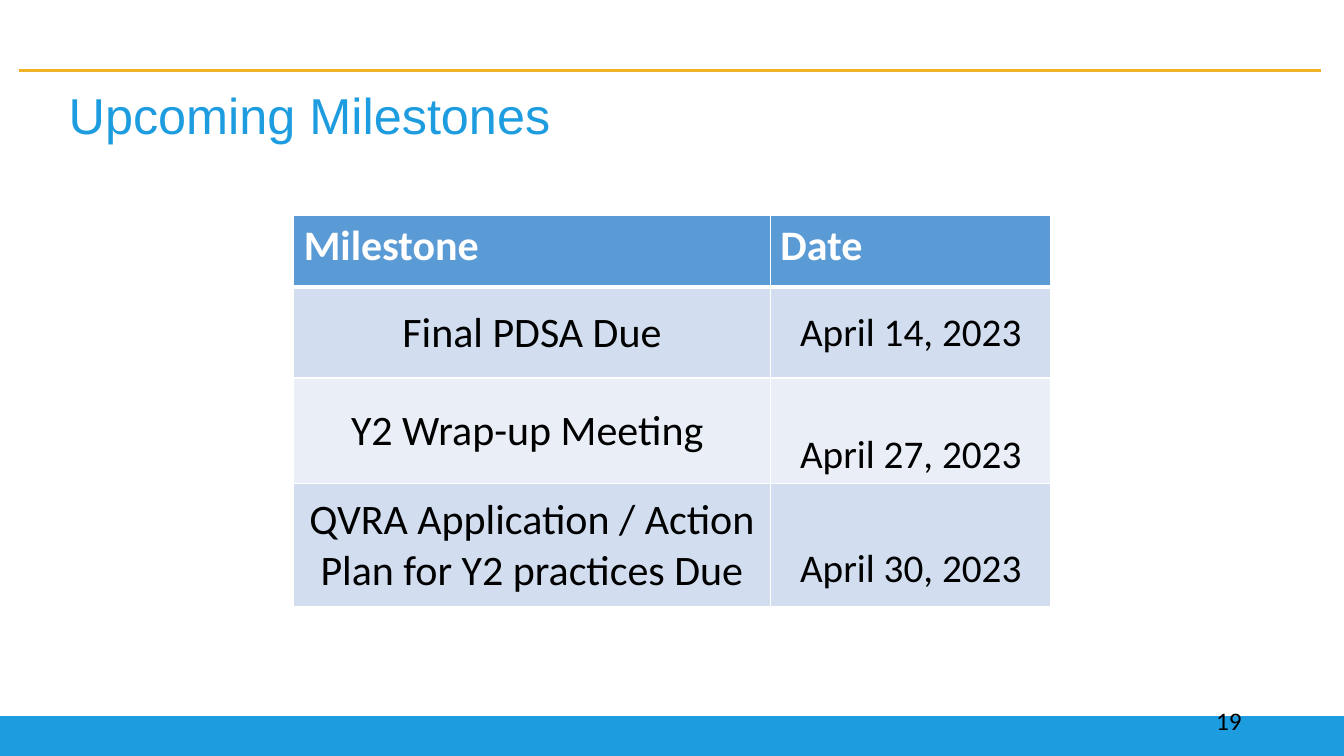
from lxml import etree
from pptx import Presentation
from pptx.dml.color import RGBColor
from pptx.enum.shapes import MSO_CONNECTOR, MSO_SHAPE
from pptx.enum.text import MSO_ANCHOR, PP_ALIGN
from pptx.oxml.ns import qn
from pptx.util import Pt

LEFT, CENTER, RIGHT = PP_ALIGN.LEFT, PP_ALIGN.CENTER, PP_ALIGN.RIGHT
TOP, MIDDLE = MSO_ANCHOR.TOP, MSO_ANCHOR.MIDDLE
RECTANGLE, STRAIGHT = MSO_SHAPE.RECTANGLE, MSO_CONNECTOR.STRAIGHT

BLUE, GOLD, WHITE, BLACK = "1D9CDF", "F1B323", "FFFFFF", "000000"
HEADER_FILL, BAND_FILLS = "5B9BD5", ("D2DEEF", "EAEFF7")
COLUMN_WIDTHS = (340.5, 200.5)
ROW_HEIGHTS = (51, 64.8, 75.6, 87.8)
LOWERED_MARGIN = 37.8
HEADERS = ("Milestone", "Date")
MILESTONES = (
    (" Final PDSA Due ", "April 14, 2023", False),
    ("Y2 Wrap-up Meeting ", "April 27, 2023", True),
    ("QVRA Application / Action Plan for Y2 practices Due", "April 30, 2023", True),
)


def color(value):
    return RGBColor.from_string(value)


def write(frame, text, size, font="Calibri", fill=BLACK, bold=False, align=LEFT, spacing=None):
    frame.word_wrap = True
    paragraph = frame.paragraphs[0]
    paragraph.alignment = align
    if spacing:
        paragraph.line_spacing = spacing
    run = paragraph.add_run()
    run.text = text
    run.font.size = Pt(size)
    run.font.name = font
    run.font.bold = bold
    run.font.color.rgb = color(fill)


def place(shape, box):
    shape.left, shape.top, shape.width, shape.height = map(Pt, box)


def add_title(slide, box):
    title = slide.shapes.title
    place(title, box)
    title.text_frame.vertical_anchor = MIDDLE
    write(title.text_frame, "Upcoming Milestones", 36, font="Arial", fill=BLUE, spacing=0.9)


def add_top_rule(slide, box):
    left, top, width, height = box
    rule = slide.shapes.add_connector(STRAIGHT, Pt(left), Pt(top), Pt(left + width), Pt(top + height))
    rule.line.color.rgb = color(GOLD)
    rule.line.width = Pt(2)
    etree.SubElement(rule._element.spPr, qn("a:effectLst"))


def add_footer(slide, box):
    left, top, width, height = box
    bar = slide.shapes.add_shape(RECTANGLE, *map(Pt, box))
    bar.shadow.inherit = False
    bar.fill.solid()
    bar.fill.fore_color.rgb = color(BLUE)
    bar.line.fill.background()
    number = slide.shapes.add_textbox(Pt(left + 678), Pt(top - 11.6), Pt(216), Pt(28.8))
    write(number.text_frame, "19", 18, align=RIGHT)


def set_borders(cell, **widths):
    properties = cell._tc.get_or_add_tcPr()
    for index, side in enumerate("LRTB"):
        line = etree.Element(qn(f"a:ln{side}"), w=str(Pt(widths.get(side, 1))))
        fill = etree.SubElement(line, qn("a:solidFill"))
        etree.SubElement(fill, qn("a:srgbClr"), val=WHITE)
        properties.insert(index, line)


def format_cell(cell, text, size, background, anchor=MIDDLE, margin_top=3.6, borders=None, **style):
    cell.fill.solid()
    cell.fill.fore_color.rgb = color(background)
    cell.vertical_anchor = anchor
    cell.margin_top = Pt(margin_top)
    set_borders(cell, **(borders or {}))
    write(cell.text_frame, text, size, **style)


def add_milestone_table(slide, box):
    table = slide.shapes.add_table(len(ROW_HEIGHTS), len(COLUMN_WIDTHS), *map(Pt, box)).table
    for column, width in zip(table.columns, COLUMN_WIDTHS):
        column.width = Pt(width)
    for row, height in zip(table.rows, ROW_HEIGHTS):
        row.height = Pt(height)
    for index, header in enumerate(HEADERS):
        format_cell(table.cell(0, index), header, 30, HEADER_FILL, anchor=TOP,
                    borders={"B": 3}, fill=WHITE, bold=True)
    for index, (milestone, date, lowered) in enumerate(MILESTONES, start=1):
        background = BAND_FILLS[(index - 1) % 2]
        borders = {"T": 3} if index == 1 else {}
        format_cell(table.cell(index, 0), milestone, 30, background, borders=borders, align=CENTER)
        format_cell(table.cell(index, 1), date, 28, background, borders=borders, align=CENTER,
                    margin_top=LOWERED_MARGIN if lowered else 3.6)


def main():
    presentation = Presentation()
    presentation.slide_width, presentation.slide_height = Pt(960), Pt(540)
    slide = presentation.slides.add_slide(presentation.slide_layouts[5])
    add_footer(slide, (0, 511.6, 960, 28.4))
    add_top_rule(slide, (13.5, 50.3, 930, 0))
    add_title(slide, (41.8, 27.2, 594, 114.5))
    add_milestone_table(slide, (209.8, 154.2, sum(COLUMN_WIDTHS), sum(ROW_HEIGHTS)))
    presentation.save("out.pptx")


if __name__ == "__main__":
    main()
